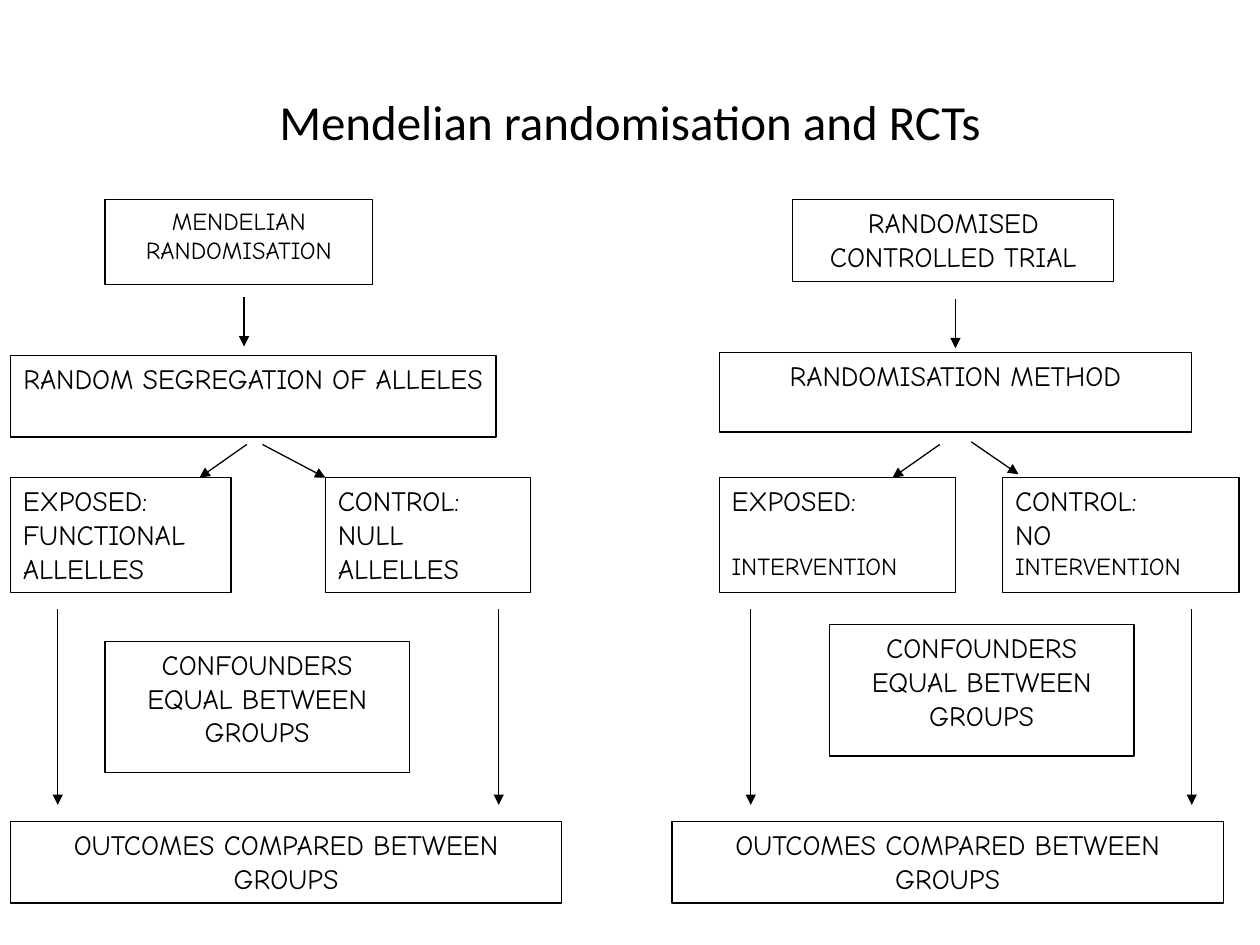
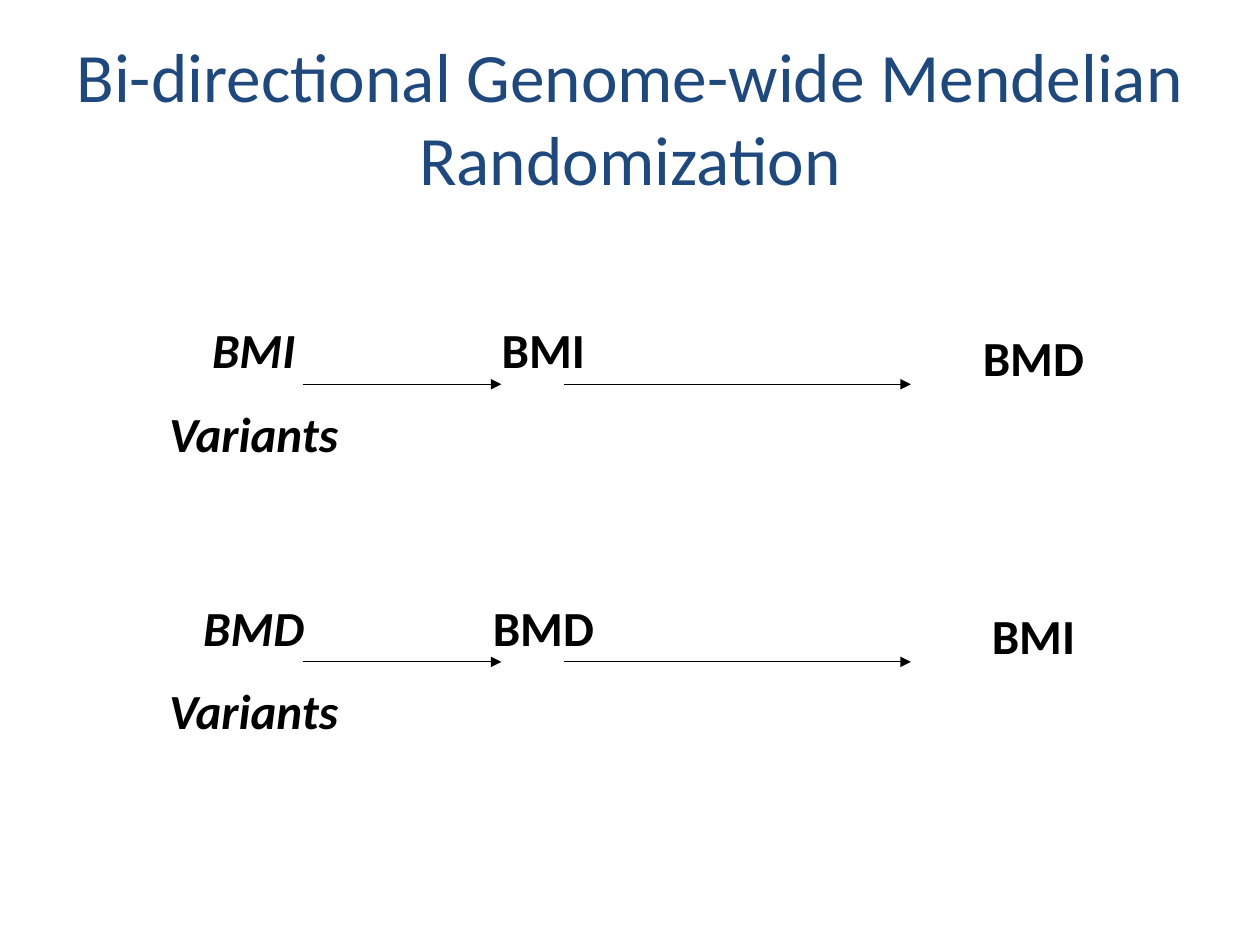
"""Build two slides on Mendelian randomisation: a trial comparison and a two-way design."""
import dataclasses

import lxml.etree
import pptx
import pptx.dml.color
import pptx.enum.shapes
import pptx.enum.text
import pptx.oxml.ns
import pptx.util

Pt = pptx.util.Pt
RGB = pptx.dml.color.RGBColor
Align = pptx.enum.text.PP_ALIGN
Anchor = pptx.enum.text.MSO_ANCHOR
Fit = pptx.enum.text.MSO_AUTO_SIZE
Kind = pptx.enum.shapes
qn = pptx.oxml.ns.qn


@dataclasses.dataclass(frozen=True)
class Theme:
    ink: RGB = RGB(0, 0, 0)
    paper: RGB = RGB(255, 255, 255)
    navy: RGB = RGB(0x1F, 0x49, 0x7D)
    sans: str = "Calibri"
    comic: str = "Comic Neue"
    small: float = 14
    body: float = 16
    large: float = 28
    huge: float = 39.6
    rule: float = 0.75


THEME = Theme()


def style(font, color=THEME.ink, **values):
    for name, value in values.items():
        setattr(font, name, value)
    font.color.rgb = color


def write(frame, paras, align, gap=0, **look):
    for i, runs in enumerate(paras):
        para = frame.add_paragraph() if i else frame.paragraphs[0]
        para.alignment = align
        if i and gap:
            para.space_before = Pt(gap)
        for text, size in runs:
            run = para.add_run()
            run.text = text
            style(run.font, size=Pt(size), **look)


def title(deck, text, area, size, color):
    slide = deck.slides.add_slide(deck.slide_layouts[5])
    shape = slide.shapes.title
    place = zip(("left", "top", "width", "height"), area)
    for name, value in place:
        setattr(shape, name, Pt(value))
    frame = shape.text_frame
    frame.auto_size = Fit.NONE
    frame.vertical_anchor = Anchor.MIDDLE
    write(frame, [[(text, size)]], Align.CENTER, name=THEME.sans, color=color)
    return slide


def box(slide, area, paras, align=Align.CENTER, gap=0):
    shape = slide.shapes.add_shape(Kind.MSO_SHAPE.RECTANGLE, *map(Pt, area))
    shape.shadow.inherit = False
    shape.fill.solid()
    shape.fill.fore_color.rgb = THEME.paper
    shape.line.color.rgb = THEME.ink
    shape.line.width = Pt(THEME.rule)
    shape.text_frame.vertical_anchor = Anchor.TOP
    write(shape.text_frame, paras, align, gap, name=THEME.comic)


def label(slide, area, words, italic=False):
    frame = slide.shapes.add_textbox(*map(Pt, area)).text_frame
    frame.word_wrap = True
    frame.auto_size = Fit.SHAPE_TO_FIT_TEXT
    paras = [[(word, THEME.large)] for word in words]
    write(frame, paras, Align.CENTER, THEME.large / 2,
          name=THEME.sans, bold=True, italic=italic)


def arrow(slide, *ends):
    link = slide.shapes.add_connector(Kind.MSO_CONNECTOR.STRAIGHT, *map(Pt, ends))
    link.line.color.rgb = THEME.ink
    link.line.width = Pt(THEME.rule)
    props = link._element.spPr
    lxml.etree.SubElement(props.find(qn("a:ln")), qn("a:tailEnd"), type="triangle")
    lxml.etree.SubElement(props, qn("a:effectLst"))


def arm(slide, head, method, exposed, control, mixed, result, links):
    for area, text, size in (head, method):
        box(slide, area, [[(text, size)]])
    for area, paras, gap in (exposed, control):
        box(slide, area, paras, Align.LEFT, gap)
    box(slide, mixed, [[("CONFOUNDERS EQUAL BETWEEN GROUPS", THEME.body)]])
    box(slide, (result, 469.3, 315, 46.7),
        [[("OUTCOMES COMPARED BETWEEN GROUPS", THEME.body)]])
    for ends in links:
        arrow(slide, *ends)


def drops(left):
    return [(x, 348, x, 460) for x in (left, left + 252)]


def compare(deck):
    slide = title(deck, "Mendelian randomisation and RCTs", (54, 24, 612, 90),
                  THEME.large, THEME.ink)
    small, body = THEME.small, THEME.body
    top, high = 273, 65.5
    arm(slide,
        head=((60, 114, 153, 48.7), "MENDELIAN RANDOMISATION", small),
        method=((6, 203, 277.5, 46.7), "RANDOM SEGREGATION OF ALLELES", body),
        exposed=((6, top, 126, high), [[("EXPOSED: FUNCTIONAL ALLELLES", body)]], 0),
        control=((186, top, 117, high), [[("CONTROL: NULL ALLELLES", body)]], 0),
        mixed=(60, 366.5, 174, 75),
        result=6,
        links=[(139.5, 170, 139.5, 198), (141, 254, 114, top),
               (150, 254, 186, top), *drops(33)])
    arm(slide,
        head=((453, 114, 183.5, 46.7), "RANDOMISED CONTROLLED TRIAL", body),
        method=((411, 201.3, 270, 45.7), "RANDOMISATION METHOD", body),
        exposed=((411, top, 135, high),
                 [[("EXPOSED:", body)], [("INTERVENTION", small)]], 19.2),
        control=((573, top, 135, high),
                 [[("CONTROL:", body)], [("NO ", body), ("INTERVENTION", small)]], 0),
        mixed=(474, 357, 174, 75),
        result=384,
        links=[(546, 171, 546, 199), (537, 254, 510, top),
               (555, 252.5, 582, 271), *drops(429)])


def chain(slide, top, cause, effect):
    label(slide, (88, top, 114, 92), (cause, "Variants"), italic=True)
    label(slide, (235.5, top, 150, 41), (cause,))
    label(slide, (505, top + 4.5, 171, 41), (effect,))
    for start, end in ((173, 286.5), (322.5, 520.5)):
        arrow(slide, start, top + 40.3, end, top + 40.3)


def design(deck):
    slide = title(deck, "Bi-directional Genome-wide Mendelian Randomization",
                  (36, 21.6, 648, 90), THEME.huge, THEME.navy)
    for i, pair in enumerate((("BMI", "BMD"), ("BMD", "BMI"))):
        chain(slide, 179.3 + 158.6 * i, *pair)


def main():
    deck = pptx.Presentation()
    deck.slide_width, deck.slide_height = Pt(720), Pt(540)
    compare(deck)
    design(deck)
    deck.save("out.pptx")


main()
